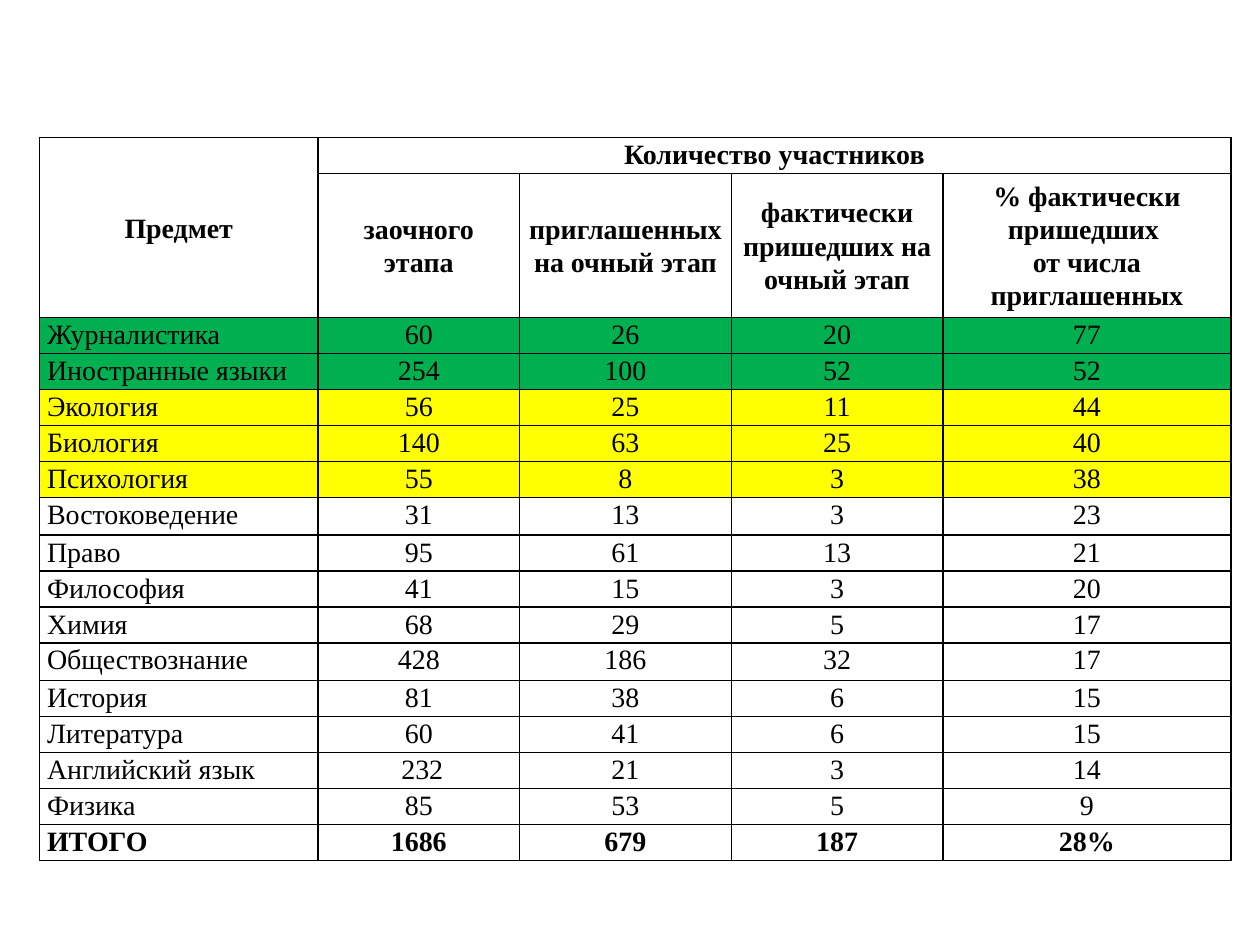
from dataclasses import dataclass

import pptx
import pptx.dml.color
import pptx.enum.text
import pptx.oxml
import pptx.oxml.ns
import pptx.util
from pptx.table import Table, _Cell

Pt = pptx.util.Pt
Align = pptx.enum.text.PP_ALIGN
Anchor = pptx.enum.text.MSO_ANCHOR

BLACK, GREEN, YELLOW = "000000", "00B050", "FFFF00"
COLUMN_WIDTHS = (159.12, 115.2, 120.96, 120.96, 164.6)
ROW_HEIGHT = 20.57
SPECIAL_HEIGHTS = {1: 82.3, 7: 21.5, 11: 21.5}
TABLE_LEFT, TABLE_TOP, TABLE_HEIGHT = 22.6, 78.6, 413.28
SUBHEADINGS = (
    "заочного этапа",
    "приглашенных на очный этап",
    "фактически пришедших на очный этап",
    "% фактически пришедших \nот числа приглашенных",
)


@dataclass
class Subject:
    name: str
    counts: tuple[str, str, str, str]
    fill: str | None = None
    bold: bool = False
    name_align: Align = Align.LEFT


SUBJECTS = (
    Subject("Журналистика", ("60", "26", "20", "77"), GREEN),
    Subject("Иностранные языки", ("254", "100", "52", "52"), GREEN),
    Subject("Экология", ("56", "25", "11", "44"), YELLOW),
    Subject("Биология", ("140", "63", "25", "40"), YELLOW),
    Subject("Психология", ("55", "8", "3", "38"), YELLOW),
    Subject("Востоковедение", ("31", "13", "3", "23")),
    Subject("Право", ("95", "61", "13", "21")),
    Subject("Философия", ("41", "15", "3", "20")),
    Subject("Химия", ("68", "29", "5", "17")),
    Subject("Обществознание", ("428", "186", "32", "17")),
    Subject("История", ("81", "38", "6", "15")),
    Subject("Литература", ("60", "41", "6", "15")),
    Subject("Английский язык", (" 232", "21", "3", "14")),
    Subject("Физика", ("85", "53", "5", "9")),
    Subject("ИТОГО", ("1686", "679", "187", "28%"), bold=True, name_align=Align.JUSTIFY),
)


def color(value: str) -> pptx.dml.color.RGBColor:
    return pptx.dml.color.RGBColor.from_string(value)


def add_borders(cell: _Cell) -> None:
    properties = cell._tc.get_or_add_tcPr()
    namespace = pptx.oxml.ns.nsdecls("a")
    for position, side in enumerate(("lnL", "lnR", "lnT", "lnB")):
        border = pptx.oxml.parse_xml(
            f'<a:{side} {namespace} w="{Pt(1)}"><a:solidFill>'
            f'<a:srgbClr val="{BLACK}"/></a:solidFill></a:{side}>'
        )
        properties.insert(position, border)


def write_cell(
    cell: _Cell,
    text: str,
    bold: bool = False,
    align: Align = Align.CENTER,
    anchor: Anchor = Anchor.TOP,
    fill: str | None = None,
) -> None:
    cell.text_frame.text = text
    cell.vertical_anchor = anchor
    for paragraph in cell.text_frame.paragraphs:
        paragraph.alignment = align
        paragraph.line_spacing = 1.07
        for span in paragraph.runs:
            span.font.name = "Times New Roman"
            span.font.size = Pt(16)
            span.font.bold = bold
            span.font.color.rgb = color(BLACK)
    if fill:
        cell.fill.solid()
        cell.fill.fore_color.rgb = color(fill)


def prepare_grid(table: Table) -> None:
    table.first_row = False
    table.horz_banding = False
    for column, width in zip(table.columns, COLUMN_WIDTHS):
        column.width = Pt(width)
    for index, row in enumerate(table.rows):
        row.height = Pt(SPECIAL_HEIGHTS.get(index, ROW_HEIGHT))
    for cell in table.iter_cells():
        cell.margin_left = cell.margin_right = Pt(4.32)
        cell.margin_top = cell.margin_bottom = 0
        cell.fill.background()
        add_borders(cell)


def write_headings(table: Table) -> None:
    table.cell(0, 0).merge(table.cell(1, 0))
    table.cell(0, 1).merge(table.cell(0, 4))
    write_cell(table.cell(0, 0), "Предмет", bold=True, anchor=Anchor.MIDDLE)
    write_cell(table.cell(0, 1), "Количество участников", bold=True)
    for column, heading in enumerate(SUBHEADINGS, start=1):
        write_cell(table.cell(1, column), heading, bold=True, anchor=Anchor.MIDDLE)


def write_subject(table: Table, row: int, subject: Subject) -> None:
    write_cell(table.cell(row, 0), subject.name, subject.bold,
               subject.name_align, fill=subject.fill)
    for column, count in enumerate(subject.counts, start=1):
        write_cell(table.cell(row, column), count, subject.bold, fill=subject.fill)


def main() -> None:
    deck = pptx.Presentation()
    deck.slide_width, deck.slide_height = Pt(720), Pt(540)
    page = deck.slides.add_slide(deck.slide_layouts[6])
    frame = page.shapes.add_table(
        len(SUBJECTS) + 2, len(COLUMN_WIDTHS), Pt(TABLE_LEFT), Pt(TABLE_TOP),
        Pt(sum(COLUMN_WIDTHS)), Pt(TABLE_HEIGHT),
    )
    prepare_grid(frame.table)
    write_headings(frame.table)
    for row, subject in enumerate(SUBJECTS, start=2):
        write_subject(frame.table, row, subject)
    deck.save("out.pptx")


if __name__ == "__main__":
    main()
